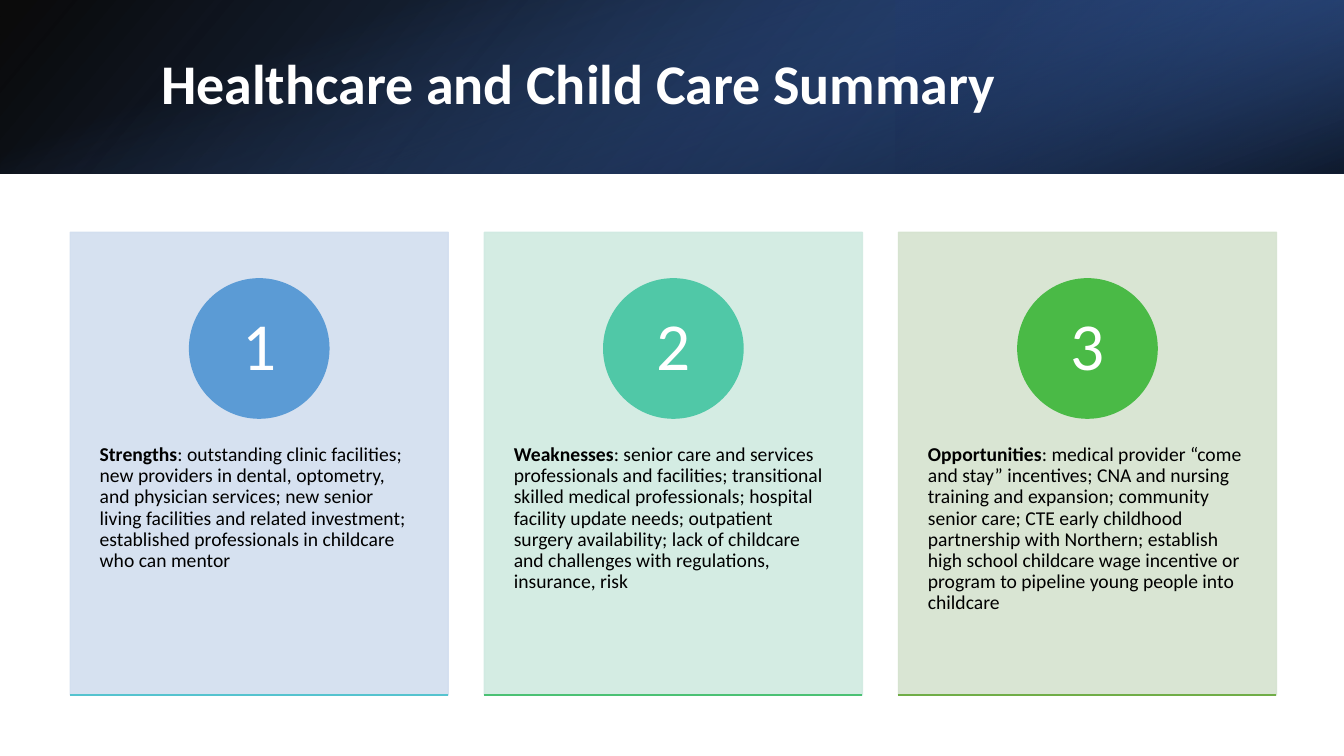
import pptx
import pptx.util
import pptx.dml.color
import pptx.enum.shapes
import pptx.enum.text
import pptx.oxml
import pptx.oxml.ns
import lxml.etree

Pt = pptx.util.Pt
SHAPE = pptx.enum.shapes.MSO_SHAPE
ALIGN = pptx.enum.text.PP_ALIGN
ANCHOR = pptx.enum.text.MSO_ANCHOR


def paint(color, hex_code, opacity=100):
    color.rgb = pptx.dml.color.RGBColor.from_string(hex_code)
    if opacity < 100:
        alpha = lxml.etree.SubElement(color._color._xClr, pptx.oxml.ns.qn("a:alpha"))
        alpha.set("val", str(opacity * 1000))


def write(sp, *texts, size, color, bold=(False,), align=ALIGN.LEFT,
          anchor=ANCHOR.TOP, insets=(7.2, 3.6)):
    tf = sp.text_frame
    tf.word_wrap = True
    tf.auto_size = pptx.enum.text.MSO_AUTO_SIZE.NONE
    tf.vertical_anchor = anchor
    tf.margin_left = tf.margin_right = Pt(insets[0])
    tf.margin_top = tf.margin_bottom = Pt(insets[1])
    p = tf.paragraphs[0]
    p.alignment = align
    p.line_spacing = 0.9
    for text, is_bold in zip(texts, bold):
        r = p.add_run()
        r.text = text
        r.font.name = "Calibri"
        r.font.size = Pt(size)
        r.font.bold = is_bold
        paint(r.font.color, color)


prs = pptx.Presentation()
prs.slide_width, prs.slide_height = Pt(960), Pt(540)
s = prs.slides.add_slide(prs.slide_layouts[5])

# Header: three layered gradients; stops are (position, colour, opacity)
HEADER_H = 124
header_layers = [
    ((0, 0, 960, HEADER_H), 0, True, 140, [(0, "000000", 96), (1, "2F5597", 100)]),
    ((640, 0, 320, HEADER_H), 180, True, 320, [(0.19, "203864", 68), (1, "4472C4", 79)]),
    ((480 - HEADER_H / 2, HEADER_H / 2 - 480, HEADER_H, 960), 90, False, 340,
     [(0.23, "4472C4", 0), (0.99, "000000", 74)]),
]
for box, rotation, flipped, angle, stops in header_layers:
    sp = s.shapes.add_shape(SHAPE.RECTANGLE, *map(Pt, box))
    sp.shadow.inherit = False
    sp.line.fill.background()
    sp.rotation = rotation
    if flipped:
        sp._element.spPr.xfrm.set("flipH", "1")
    sp.fill.gradient()
    sp.fill.gradient_angle = 360 - angle  # python-pptx counts anticlockwise
    for stop, (position, color, opacity) in zip(sp.fill.gradient_stops, stops):
        stop.position = position
        paint(stop.color, color, opacity)

# Title, raised above the header
title = s.shapes.title
title.left, title.top, title.width, title.height = map(Pt, (108, 27.4, 790.6, 69.1))
write(title, "Healthcare and Child Care Summary", size=40, color="FFFFFF",
      bold=(True,), anchor=ANCHOR.MIDDLE)
s.shapes._spTree.append(title._element)

# Cards: heading, body, card colour, circle colour, base line colour
cards = [
    ("Strengths",
     ": outstanding clinic facilities; new providers in dental, optometry, and physician "
     "services; new senior living facilities and related investment; established "
     "professionals in childcare who can mentor",
     "D2DEEF", "5B9BD5", "55C3CF"),
    ("Weaknesses",
     ": senior care and services professionals and facilities; transitional skilled medical "
     "professionals; hospital facility update needs; outpatient surgery availability; lack "
     "of childcare and challenges with regulations, insurance, risk",
     "D0EAE1", "50C8A7", "4BC174"),
    ("Opportunities",
     ": medical provider “come and stay” incentives; CNA and nursing training and expansion; "
     "community senior care; CTE early childhood partnership with Northern; establish high "
     "school childcare wage incentive or program to pipeline young people into childcare",
     "D5E3CF", "4ABA46", "70AD47"),
]
LEFT, TOP, CARD_W, CARD_H, STEP = 50.2, 166, 270, 330.5, 295.8
CIRCLE = 99.5
BOTTOM = TOP + CARD_H

for i, (heading, body, card_color, circle_color, line_color) in enumerate(cards):
    x = LEFT + i * STEP

    # Card and numbered circle
    panels = [
        (SHAPE.RECTANGLE, (x, TOP, CARD_W, CARD_H), card_color, 90),
        (SHAPE.OVAL, (x + (CARD_W - CIRCLE) / 2, 199.2, CIRCLE, CIRCLE), circle_color, 100),
    ]
    for kind, box, color, opacity in panels:
        sp = s.shapes.add_shape(kind, *map(Pt, box))
        sp.shadow.inherit = False
        sp.fill.solid()
        paint(sp.fill.fore_color, color, opacity)
        paint(sp.line.color, color, opacity)
        sp.line.width = Pt(1)
    write(sp, str(i + 1), size=48, color="FFFFFF", align=ALIGN.CENTER,
          anchor=ANCHOR.MIDDLE, insets=(0, 0))

    # Summary text
    sp = s.shapes.add_textbox(*map(Pt, (x, 291.6, CARD_W, 198.3)))
    write(sp, heading, body, size=14, color="000000", bold=(True, False), insets=(21, 26))

    # Base line
    line = s.shapes.add_connector(pptx.enum.shapes.MSO_CONNECTOR.STRAIGHT,
                                  *map(Pt, (x, BOTTOM, x + CARD_W, BOTTOM)))
    line.line.width = Pt(1)
    paint(line.line.color, line_color)
    lxml.etree.SubElement(line._element.spPr, pptx.oxml.ns.qn("a:effectLst"))

prs.save("out.pptx")
